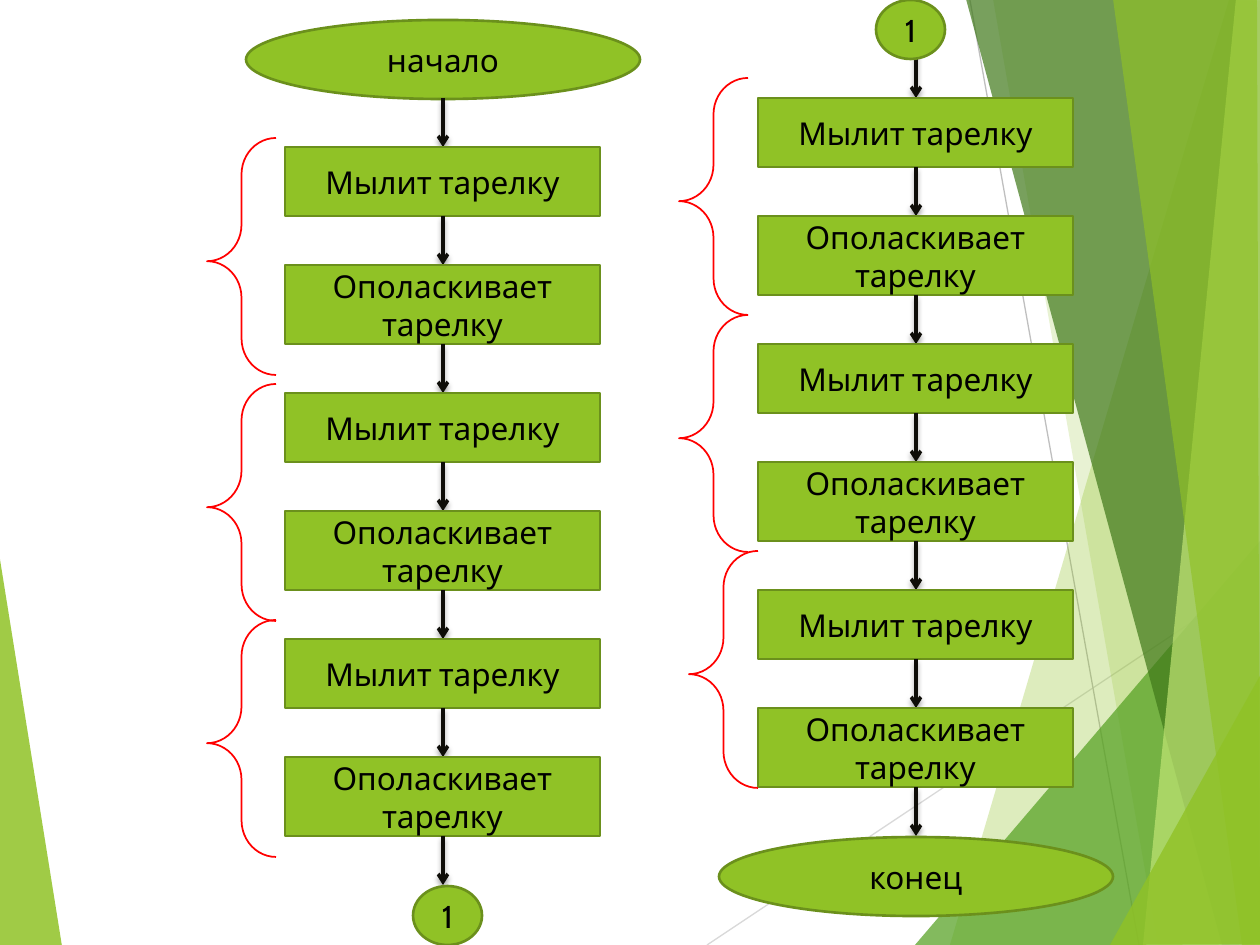
from lxml import etree
from pptx import Presentation
from pptx.dml.color import RGBColor
from pptx.enum.shapes import MSO_CONNECTOR, MSO_SHAPE as Shape
from pptx.enum.text import MSO_ANCHOR, PP_ALIGN
from pptx.oxml import parse_xml
from pptx.oxml.ns import nsdecls, qn
from pptx.util import Pt

SCALE = 914400 / 126
GREEN = "90C226"
STEP_HEIGHTS = (("Мылит тарелку", 69), ("Ополаскивает тарелку", 79))
GAP = 49
CYCLE = sum(height + GAP for _, height in STEP_HEIGHTS)

# Fill colour, opacity in percent, corner points
FACETS = (
    (GREEN, 85, ((-1, 553), (62, 946), (-1, 945))),
    (GREEN, 30, ((1229, 0), (950, 945), (1262, 946), (1261, 1))),
    (GREEN, 20, ((993, -1), (1158, 945), (1261, 945), (1261, -1))),
    ("54A021", 72, ((915, 945), (1260, 541), (1261, 945))),
    ("3F7819", 70, ((966, -1), (1222, 945), (1261, 944), (1261, -1))),
    ("C0E474", 70, ((1236, -1), (1143, 945), (1261, 945), (1260, -1))),
    (GREEN, 65, ((1113, -1), (1242, 945), (1260, 945), (1257, -1))),
    (GREEN, 80, ((1110, 945), (1261, 674), (1261, 944))),
)
RAYS = (("D9D9D9", (707, 945), (1261, 576)), ("BFBFBF", (970, 0), (1139, 945)))
BRACES = ((207, 138), (207, 384), (207, 620), (679, 78), (679, 315), (689, 551))

ARROW_SHADOW = (
    f'<a:outerShdw {nsdecls("a")} blurRad="38100" dist="25400" dir="5400000" rotWithShape="0">'
    '<a:srgbClr val="000000"><a:alpha val="35000"/></a:srgbClr></a:outerShdw>'
)


def emu(*lengths):
    return [round(length * SCALE) for length in lengths]


def color(value):
    return RGBColor.from_string(value)


def apply(target, values):
    for name, value in values.items():
        setattr(target, name, value)


class FlowchartSlide:
    font_format = {"name": "Cabin", "size": Pt(18), "color": "000000"}
    frame_format = {"word_wrap": True, "vertical_anchor": MSO_ANCHOR.MIDDLE}

    def __init__(self, presentation):
        self.slide = presentation.slides.add_slide(presentation.slide_layouts[6])
        self.shapes = self.slide.shapes

    def outline(self, shape, value, width):
        shape.line.color.rgb = color(value)
        shape.line.width = Pt(width)

    def facet(self, fill, opacity, points):
        """Draw a translucent background polygon."""
        builder = self.shapes.build_freeform(*points[0], scale=SCALE)
        builder.add_line_segments(points[1:], close=True)
        shape = builder.convert_to_shape()
        shape.shadow.inherit = False
        shape.line.fill.background()
        shape.fill.solid()
        shape.fill.fore_color.rgb = color(fill)
        rgb = shape.fill._xPr.find(f".//{qn('a:srgbClr')}")
        etree.SubElement(rgb, qn("a:alpha")).set("val", str(opacity * 1000))

    def line(self, value, start, end, width=0.75):
        connector = self.shapes.add_connector(MSO_CONNECTOR.STRAIGHT, *emu(*start, *end))
        self.outline(connector, value, width)
        effects = etree.SubElement(connector._element.spPr, qn("a:effectLst"))
        return connector, effects

    def arrow(self, x, top):
        connector, effects = self.line("0E0D08", (x, top), (x, top + GAP), 2)
        effects.append(parse_xml(ARROW_SHADOW))
        line_xml = connector.line._get_or_add_ln()
        etree.SubElement(line_xml, qn("a:tailEnd")).set("type", "arrow")

    def block(self, kind, text, left, top, width, height):
        shape = self.shapes.add_shape(kind, *emu(left, top, width, height))
        shape.shadow.inherit = False
        shape.fill.solid()
        shape.fill.fore_color.rgb = color(GREEN)
        self.outline(shape, "6B901C", 1.5)
        apply(shape.text_frame, self.frame_format)
        paragraph = shape.text_frame.paragraphs[0]
        paragraph.text = text
        paragraph.alignment = PP_ALIGN.CENTER
        values = dict(self.font_format)
        font = paragraph.runs[0].font
        font.color.rgb = color(values.pop("color"))
        apply(font, values)

    def terminal(self, text, center, top):
        self.block(Shape.OVAL, text, center - 197, top, 394, 79)

    def link(self, left, top):
        self.block(Shape.FLOWCHART_CONNECTOR, "1", left, top, 69, 59)

    def column(self, center, top):
        """Draw three wash cycles with an arrow before and after every step."""
        self.arrow(center, top - GAP)
        for cycle in range(3):
            y = top + cycle * CYCLE
            for text, height in STEP_HEIGHTS:
                self.block(Shape.RECTANGLE, text, center - 158, y, 315, height)
                self.arrow(center, y + height)
                y += height + GAP

    def brace(self, left, top):
        shape = self.shapes.add_shape(Shape.LEFT_BRACE, *emu(left, top, 69, 237))
        shape.shadow.inherit = False
        shape.fill.background()
        self.outline(shape, "FF0000", 1)
        shape.adjustments[0] = 0.53
        shape.adjustments[1] = 0.52


def main():
    presentation = Presentation()
    presentation.slide_width, presentation.slide_height = emu(1260, 945)
    chart = FlowchartSlide(presentation)

    chart.facet(*FACETS[0])
    for ray in RAYS:
        chart.line(*ray)
    for facet in FACETS[1:]:
        chart.facet(*facet)

    chart.terminal("начало", 443, 20)
    chart.column(443, 147)
    chart.link(413, 886)

    chart.column(916, 98)
    chart.link(876, 0)
    chart.terminal("конец", 916, 837)

    for left, top in BRACES:
        chart.brace(left, top)
    presentation.save("out.pptx")


if __name__ == "__main__":
    main()
